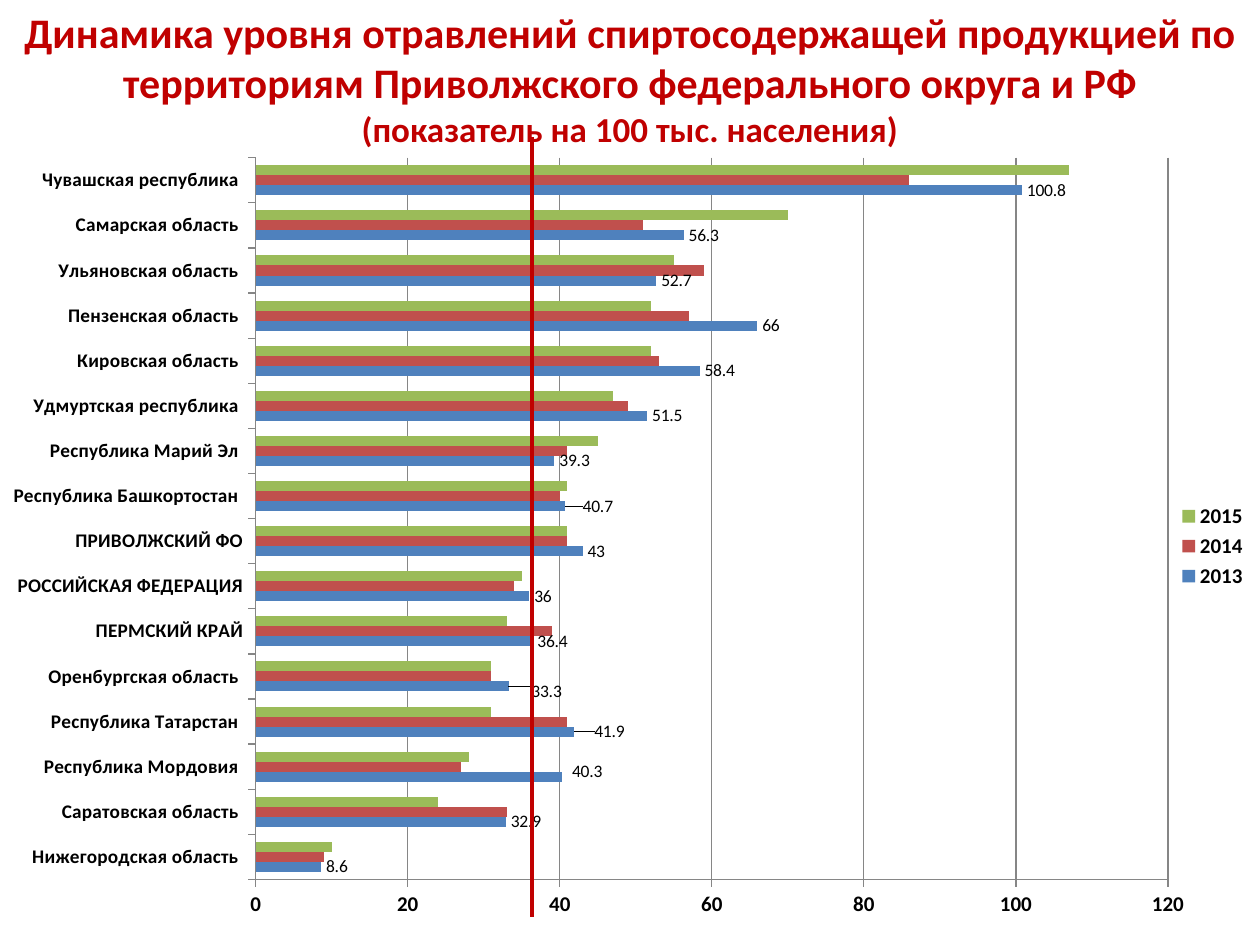
from lxml import etree
from pptx import Presentation, util as u
from pptx.chart.data import CategoryChartData
from pptx.dml.color import RGBColor
from pptx.enum import chart as ch, shapes, text
from pptx.oxml.ns import qn

TERRITORIES = {
    "Нижегородская область ": (8.6, 9, 10),
    "Саратовская область ": (32.9, 33, 24),
    "Республика Мордовия ": (40.3, 27, 28),
    "Республика Татарстан ": (41.9, 41, 31),
    "Оренбургская область ": (33.3, 31, 31),
    "ПЕРМСКИЙ КРАЙ": (36.4, 39, 33),
    "РОССИЙСКАЯ ФЕДЕРАЦИЯ": (36, 34, 35),
    "ПРИВОЛЖСКИЙ ФО": (43, 41, 41),
    "Республика Башкортостан ": (40.7, 40, 41),
    "Республика Марий Эл ": (39.3, 41, 45),
    "Удмуртская республика ": (51.5, 49, 47),
    "Кировская область ": (58.4, 53, 52),
    "Пензенская область ": (66, 57, 52),
    "Ульяновская область ": (52.7, 59, 55),
    "Самарская область ": (56.3, 51, 70),
    "Чувашская республика ": (100.8, 86, 107),
}
YEAR_COLORS = {"2013": "4F81BD", "2014": "C0504D", "2015": "9BBB59"}
LABEL_SHIFTS = {2: (0.004, -0.006), 3: (0.012, 0), 4: (0.014, 0.006), 8: (0.01, 0)}


def color(hex_string):
    return RGBColor.from_string(hex_string)


def manual_layout(**settings):
    """Return a c:layout element whose children follow the given order."""
    layout = etree.Element(qn("c:layout"))
    manual = etree.SubElement(layout, qn("c:manualLayout"))
    for tag, value in settings.items():
        etree.SubElement(manual, qn(f"c:{tag}")).set("val", str(value))
    return layout


class Report:
    FONT = "Calibri"
    INK, ACCENT, GRID = "000000", "C00000", "868686"

    def __init__(self, width=10, height=7.5):
        self.deck = Presentation()
        self.deck.slide_width, self.deck.slide_height = u.Inches(width), u.Inches(height)
        self.slide = self.deck.slides.add_slide(self.deck.slide_layouts[6])

    def place(self, *shares):
        """Turn alternating shares of slide width and height into lengths."""
        sides = (self.deck.slide_width, self.deck.slide_height) * 2
        return [u.Emu(round(share * side)) for share, side in zip(shares, sides)]

    def style(self, font, size, bold=False, ink=INK):
        font.name, font.size, font.bold = self.FONT, u.Pt(size), bold
        font.color.rgb = color(ink)

    def title(self, box, lines):
        frame = self.slide.shapes.add_textbox(*self.place(*box)).text_frame
        frame.word_wrap = True
        frame.auto_size = text.MSO_AUTO_SIZE.SHAPE_TO_FIT_TEXT
        heading = frame.paragraphs[0]
        heading.alignment = text.PP_ALIGN.CENTER
        for number, (words, size) in enumerate(lines):
            if number:
                heading.add_line_break()
            run = heading.add_run()
            run.text = words
            self.style(run.font, size, True, self.ACCENT)

    def bar_chart(self, box, rows, year_colors, plot_area, label_shifts):
        data = CategoryChartData()
        data.categories = list(rows)
        for year, values in zip(year_colors, zip(*rows.values())):
            data.add_series(year, values)
        chart = self.slide.shapes.add_chart(
            ch.XL_CHART_TYPE.BAR_CLUSTERED, *self.place(*box), data).chart
        self.style(chart.font, 10)
        chart.has_title = False
        chart.has_legend = True
        chart.legend.position = ch.XL_LEGEND_POSITION.RIGHT
        chart.legend.include_in_layout = False
        self.style(chart.legend.font, 12, True)

        bars = chart.plots[0]
        bars.gap_width, bars.overlap, bars.vary_by_categories = 150, 0, False
        for series in bars.series:
            series.format.fill.solid()
            series.format.fill.fore_color.rgb = color(year_colors[series.name])
        self.axis(chart.category_axis, 11)
        self.axis(chart.value_axis, 12)
        values = chart.value_axis
        values.minimum_scale, values.maximum_scale, values.major_unit = 0, 120, 20
        values.has_major_gridlines = True
        self.thin_line(values.major_gridlines.format.line)
        self.value_labels(bars.series[0], label_shifts)

        area = chart._chartSpace.xpath("c:chart/c:plotArea")[0]
        for automatic in area.findall(qn("c:layout")):
            area.remove(automatic)
        x, y, w, h = plot_area
        area.insert(0, manual_layout(layoutTarget="inner", xMode="edge", yMode="edge",
                                     x=x, y=y, w=w, h=h))

    def thin_line(self, line):
        line.color.rgb, line.width = color(self.GRID), u.Pt(0.75)

    def axis(self, axis, size):
        self.style(axis.tick_labels.font, size, True)
        axis.major_tick_mark = ch.XL_TICK_MARK.OUTSIDE
        axis.has_major_gridlines = False
        self.thin_line(axis.format.line)

    def value_labels(self, series, shifts):
        labels = series.data_labels
        labels.show_value = True
        labels.position = ch.XL_LABEL_POSITION.OUTSIDE_END
        self.style(labels.font, 10)
        for index, (x, y) in shifts.items():
            label = series.points[index].data_label
            label.position = ch.XL_LABEL_POSITION.OUTSIDE_END
            self.style(label.font, 10)
            node = series._element.xpath(f"c:dLbls/c:dLbl[c:idx/@val='{index}']")[0]
            node.find(qn("c:idx")).addnext(manual_layout(x=x, y=y))

    def rule(self, start, end):
        line = self.slide.shapes.add_connector(
            shapes.MSO_CONNECTOR.STRAIGHT, *self.place(*start, *end))
        line.line.color.rgb, line.line.width = color(self.ACCENT), u.Pt(2.25)
        etree.SubElement(line._element.spPr, qn("a:effectLst"))


def main():
    report = Report()
    report.bar_chart((0, 0.156, 1, 0.844), TERRITORIES, YEAR_COLORS,
                     plot_area=(0.203, 0.013, 0.724, 0.905), label_shifts=LABEL_SHIFTS)
    report.title((0, 0, 1, 1 / 6), [
        ("Динамика уровня отравлений спиртосодержащей продукцией по "
         "территориям Приволжского федерального округа и РФ", 24),
        ("(показатель на 100 тыс. населения)", 20),
    ])
    report.rule((0.422, 0.97), (0.422, 0.145))
    report.deck.save("out.pptx")


if __name__ == "__main__":
    main()
